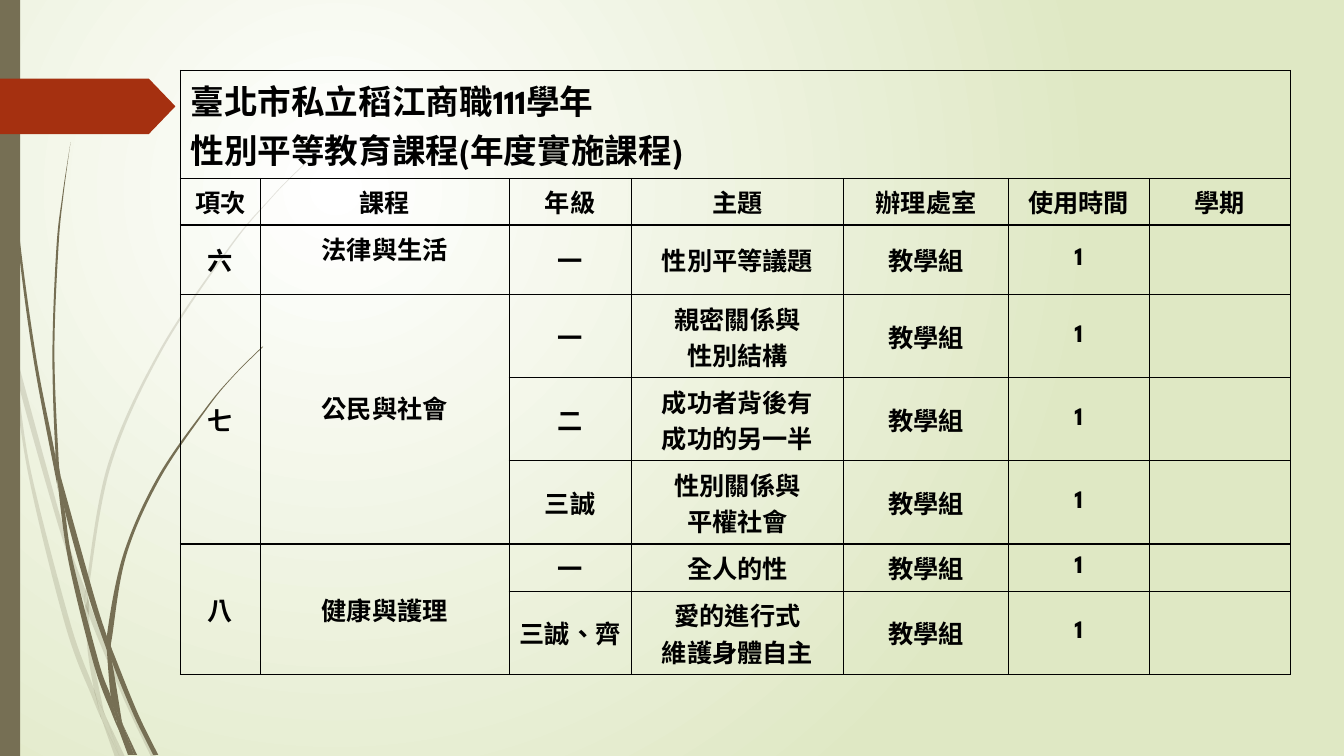
"""Build the gender equity course table slide with its grass-blade decoration."""
from pptx import Presentation
from pptx import util as u
from pptx.dml.color import RGBColor
from pptx.enum import lang, shapes, text
from pptx.oxml import parse_xml
from pptx.oxml.ns import nsdecls, qn

THEME = dict(font="League Spartan", title=24, body=18, ink="000000", stem="766F54",
             tag="A53010", glow="FFFFFF", edge="DFE8C4")
W, H = 13.33, 7.5
UNITS = 1000

prs = Presentation()
prs.slide_width, prs.slide_height = u.Inches(W), u.Inches(H)
s = prs.slides.add_slide(prs.slide_layouts[6])

bg = s.background.fill
bg.gradient()
for stop, name in zip(bg.gradient_stops, ("glow", "edge")):
    stop.color.rgb = RGBColor.from_string(THEME[name])
lin = s.background._cSld.find(".//" + qn("a:lin"))
lin.getparent().replace(lin, parse_xml(
    f'<a:path {nsdecls("a")} path="circle">'
    '<a:fillToRect l="50000" t="50000" r="100000" b="100000"/></a:path>'))


def paint(sp, color):
    """Give a shape a flat fill with no outline or shadow."""
    sp.shadow.inherit = False
    sp.fill.solid()
    sp.fill.fore_color.rgb = RGBColor.from_string(THEME[color])
    sp.line.fill.background()


def bend(lines, pts):
    """Turn the line segments that join pts into one smooth run of curves."""
    ends = [pts[0], *pts, pts[-1]]
    for line, a, b, c, d in zip(lines, ends, ends[1:], ends[2:], ends[3:]):
        c1 = [q + (r - p) / 6 for p, q, r in zip(a, b, c)]
        c2 = [q - (r - p) / 6 for p, q, r in zip(b, c, d)]
        knots = "".join(f'<a:pt x="{round(x)}" y="{round(y)}"/>' for x, y in (c1, c2, c))
        line.getparent().replace(line, parse_xml(
            f'<a:cubicBezTo {nsdecls("a")}>{knots}</a:cubicBezTo>'))


faint = [
    ([(0, 2.99), (.1, 3.44), (.11, 3.5)], [(0, 2.82), (.09, 3.22), (.11, 3.5)]),
    ([(.14, 3.45), (.17, 3.76), (.58, 5.22), (.84, 5.99)], [(.14, 3.45), (.62, 5.2), (.85, 5.86)]),
    ([(.88, 5.96), (.88, 6.1), (1.23, 6.94), (1.5, 7.51)],
     [(.88, 5.96), (.92, 6.07), (1.27, 6.92), (1.55, 7.51)]),
    ([(1.05, 7.11), (1.19, 7.51)], [(1.05, 7.11), (1.24, 7.51)]),
    ([(.11, 3.5), (.28, 4.7), (.65, 6.21), (.92, 6.93), (1.01, 7.14)],
     [(.11, 3.5), (.17, 3.76), (.31, 4.69), (.7, 6.19), (.93, 6.83), (.99, 7.07)]),
    ([(.84, 5.99), (.87, 6.46), (.93, 6.83), (.96, 6.92), (1.05, 7.11)],
     [(.84, 5.99), (.88, 6.08), (.91, 6.46), (1.03, 7.06)]),
    ([(3.12, 1.53), (2.89, 1.75), (2.68, 1.97), (2.28, 2.44), (1.58, 3.48), (1.07, 4.61),
      (.85, 5.84), (.85, 5.86)],
     [(3.12, 1.54), (2.9, 1.75), (2.68, 1.98), (2.29, 2.45), (1.6, 3.49), (1.1, 4.62),
      (.88, 5.84), (.88, 5.96)]),
    ([(1.01, 7.14), (1.14, 7.51)], [(1.01, 7.14), (1.19, 7.51)]),
    ([(.85, 5.86), (.84, 5.99), (.88, 6.1)], [(.85, 5.86), (.88, 5.96), (.88, 6.08)]),
    ([(.93, 6.83), (.99, 7.07), (1.01, 7.14), (1.19, 7.51)],
     [(.93, 6.83), (.96, 6.92), (1.05, 7.11), (1.19, 7.51)]),
]
solid = [
    ([(.03, 0), (.04, .48), (.07, 1.1), (.17, 2.33), (.33, 3.55), (.56, 4.77), (.57, 4.81)],
     [(.04, 0), (.05, .48), (.08, 1.09), (.19, 2.32), (.36, 3.55), (.55, 4.53), (.57, 4.81)]),
    ([(.6, 4.72), (.64, 5.05), (.88, 5.92), (1.06, 6.45)], [(.6, 4.72), (.93, 5.9), (1.06, 6.31)]),
    ([(1.1, 6.41), (1.11, 6.56), (1.32, 7.08), (1.52, 7.49)],
     [(1.1, 6.41), (1.13, 6.49), (1.36, 7.06), (1.57, 7.49)]),
    ([(.57, 4.77), (.68, 5.57), (.93, 6.59), (1.11, 7.08), (1.17, 7.22)],
     [(.57, 4.77), (.64, 5.05), (.72, 5.56), (.98, 6.57), (1.1, 6.91), (1.16, 7.17)]),
    ([(.7, 1.41), (.62, 1.93), (.56, 2.45), (.52, 3.49), (.55, 4.49), (.6, 4.72)],
     [(.7, 1.41), (.63, 1.93), (.58, 2.45), (.54, 3.49), (.58, 4.53), (.6, 4.72)]),
    ([(1.22, 7.19), (1.33, 7.49)], [(1.22, 7.19), (1.36, 7.49)]),
    ([(.55, 4.49), (.55, 4.53), (.57, 4.77), (.64, 5.05)], [(.55, 4.49), (.6, 4.72), (.64, 5.05)]),
    ([(2.6, 3.44), (2.31, 3.73), (2.04, 4.05), (1.56, 4.74), (1.22, 5.51), (1.06, 6.31), (1.1, 6.41)],
     [(2.61, 3.44), (2.31, 3.74), (2.05, 4.06), (1.58, 4.76), (1.25, 5.52), (1.11, 6.33), (1.1, 6.41)]),
    ([(1.17, 7.22), (1.27, 7.49)], [(1.17, 7.22), (1.31, 7.49)]),
    ([(1.06, 6.45), (1.1, 6.91), (1.16, 7.06), (1.22, 7.19)],
     [(1.06, 6.45), (1.11, 6.56), (1.21, 7.16)]),
    ([(1.06, 6.31), (1.06, 6.45), (1.11, 6.56)], [(1.06, 6.31), (1.1, 6.41), (1.11, 6.56)]),
    ([(1.1, 6.91), (1.16, 7.17), (1.17, 7.22), (1.3, 7.49)],
     [(1.1, 6.91), (1.16, 7.06), (1.22, 7.19), (1.33, 7.49)]),
]
for blades, alpha in ((faint, 20), (solid, 100)):
    for left, right in blades:
        outline = [(round(x * UNITS), round(y * UNITS)) for x, y in left + right[::-1]]
        fb = s.shapes.build_freeform(*outline[0], scale=u.Inches(1) / UNITS)
        fb.add_line_segments(outline[1:])
        sp = fb.convert_to_shape()
        paint(sp, "stem")
        x0, y0 = (min(axis) for axis in zip(*outline))
        knots = [(x - x0, y - y0) for x, y in outline]
        lines = sp._element.findall(".//" + qn("a:lnTo"))
        n = len(left)
        bend(lines[:n - 1], knots[:n])
        bend(lines[n:], knots[n:])
        if alpha < 100:
            clr = sp._element.spPr.find(".//" + qn("a:srgbClr"))
            clr.append(parse_xml(f'<a:alpha {nsdecls("a")} val="{alpha * 1000}"/>'))

sp = s.shapes.add_shape(shapes.MSO_SHAPE.RECTANGLE, 0, 0, u.Inches(.2), u.Inches(H))
paint(sp, "stem")
sp = s.shapes.add_shape(shapes.MSO_SHAPE.PENTAGON, 0, u.Inches(.78), u.Inches(1.74), u.Inches(.55))
sp.adjustments[0] = .48
paint(sp, "tag")

cols = [.79, 2.47, 1.21, 2.11, 1.63, 1.4, 1.4]
heights = [1.07, .46, .69, .82, .82, .82, .47, .82]
office, hours = "教學組", "1"
rows = [
    ["臺北市私立稻江商職111學年\n性別平等教育課程(年度實施課程)"],
    ["項次", "課程", "年級", "主題", "辦理處室", "使用時間", "學期"],
    ["六", "法律與生活", "一", "性別平等議題", office, hours],
    ["七", "公民與社會", "一", "親密關係與\n性別結構", office, hours],
    ["", "", "二", "成功者背後有\n成功的另一半", office, hours],
    ["", "", "三誠", "性別關係與\n平權社會", office, hours],
    ["八", "健康與護理", "一", "全人的性", office, hours],
    ["", "", "三誠、齊", "愛的進行式\n維護身體自主", office, hours],
]
tb = s.shapes.add_table(len(rows), len(cols), u.Inches(1.79), u.Inches(.7),
                        u.Inches(sum(cols)), u.Inches(sum(heights))).table
tb.first_row = tb.horz_banding = False
for col, width in zip(tb.columns, cols):
    col.width = u.Inches(width)
for row, height in zip(tb.rows, heights):
    row.height = u.Inches(height)

for i, row in enumerate(rows):
    for j in range(len(cols)):
        cell = tb.cell(i, j)
        cell.fill.background()
        tcPr = cell._tc.get_or_add_tcPr()
        for k, side in enumerate("LRTB"):
            tcPr.insert(k, parse_xml(
                f'<a:ln{side} {nsdecls("a")} w="12700"><a:solidFill>'
                f'<a:srgbClr val="{THEME["ink"]}"/></a:solidFill></a:ln{side}>'))
        if j >= len(row) or not row[j]:
            continue
        cell.text = row[j]
        if i > 1:
            cell.vertical_anchor = text.MSO_ANCHOR.MIDDLE
        for p in cell.text_frame.paragraphs:
            p.alignment = text.PP_ALIGN.CENTER if i else text.PP_ALIGN.JUSTIFY
            f = p.font
            f.name, f.bold = THEME["font"], True
            f.size = u.Pt(THEME["body"] if i else THEME["title"])
            f.color.rgb = RGBColor.from_string(THEME["ink"])
            f.language_id = lang.MSO_LANGUAGE_ID.TRADITIONAL_CHINESE

for i in (2, 3):
    tb.cell(i, 1).margin_bottom = u.Inches(.28)
tb.cell(0, 0).merge(tb.cell(0, len(cols) - 1))
for first, last in ((3, 5), (6, 7)):
    for j in (0, 1):
        tb.cell(first, j).merge(tb.cell(last, j))

prs.save("out.pptx")
